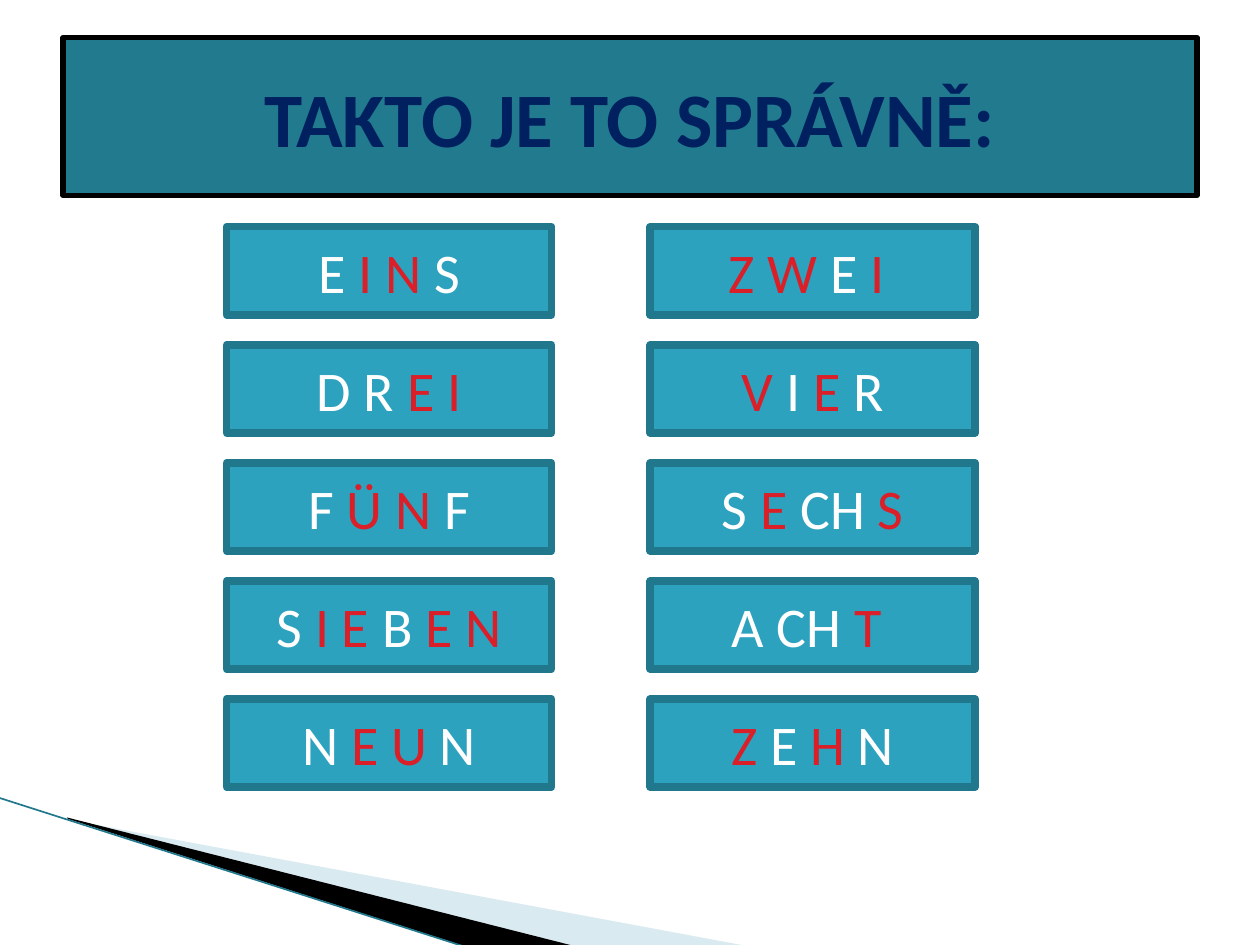
from lxml.etree import SubElement
from pptx import Presentation
from pptx.dml.color import RGBColor
from pptx.enum.shapes import MSO_CONNECTOR as Connector, MSO_SHAPE as Shape
from pptx.enum.text import MSO_ANCHOR as Anchor, PP_ALIGN as Align
from pptx.oxml.ns import qn
from pptx.util import Cm, Pt

WHITE = RGBColor(0xFF, 0xFF, 0xFF)
BLACK = RGBColor(0x00, 0x00, 0x00)
NAVY = RGBColor(0x00, 0x20, 0x60)
RED = RGBColor(0xDA, 0x1F, 0x28)
TEAL = RGBColor(0x22, 0x7A, 0x8F)
DARK_TEAL = RGBColor(0x21, 0x78, 0x8D)
AQUA = RGBColor(0x2D, 0xA2, 0xBF)
PALE = RGBColor(0xA0, 0xCB, 0xDC)

ROWS = [
    ("E |I N| S", "|Z W| E |I "),
    ("D R |E I", "|V| I |E| R"),
    ("F |Ü N| F", "S |E| CH |S"),
    ("S |I E| B |E N", "A CH |T "),
    ("N |E U| N", "|Z| E |H| N"),
]
COLUMN_LEFTS = (4.57, 13.11)
FIRST_TOP, ROW_STEP = 4.57, 2.38
CARD_WIDTH, CARD_HEIGHT = 6.55, 1.78


def write_text(box, text, *, size, color, accent=RED, bold=False):
    """Write centred text; the pieces between bars alternate to the accent colour."""
    frame = box.text_frame
    frame.word_wrap = True
    frame.vertical_anchor = Anchor.MIDDLE
    para = frame.paragraphs[0]
    para.alignment = Align.CENTER
    for index, piece in enumerate(text.split("|")):
        if piece:
            span = para.add_run()
            span.text = piece
            span.font.name = "Calibri"
            span.font.size = Pt(size)
            span.font.bold = bold
            span.font.color.rgb = accent if index % 2 else color


def add_box(page, left, top, width, height, *, fill, line, weight):
    """Add a filled and outlined rectangle, measured in centimetres."""
    box = page.shapes.add_shape(Shape.RECTANGLE, Cm(left), Cm(top), Cm(width), Cm(height))
    box.shadow.inherit = False
    box.fill.solid()
    box.fill.fore_color.rgb = fill
    box.line.color.rgb = line
    box.line.width = Pt(weight)
    return box


def add_wedge(page, points, *, fill, opacity=100):
    """Add a borderless polygon through points in centimetres."""
    start, *others = [(Cm(x), Cm(y)) for x, y in points]
    builder = page.shapes.build_freeform(*start)
    builder.add_line_segments(others, close=True)
    wedge = builder.convert_to_shape()
    wedge.shadow.inherit = False
    wedge.fill.solid()
    wedge.fill.fore_color.rgb = fill
    wedge.line.fill.background()
    if opacity < 100:
        color = wedge.fill._xPr.find(".//" + qn("a:srgbClr"))
        SubElement(color, qn("a:alpha"), val=str(opacity * 1000))


def add_line(page, start, end, *, color, weight):
    """Add a straight line between two points in centimetres."""
    line = page.shapes.add_connector(Connector.STRAIGHT, *map(Cm, start + end))
    line.line.color.rgb = color
    line.line.width = Pt(weight)
    SubElement(line._element.spPr, qn("a:effectLst"))


def add_corner(page):
    """Draw the sweeping wedges in the lower left corner."""
    add_wedge(page, [(1.4, 16.53), (15.11, 19.08), (11.58, 19.08), (1.4, 16.51)],
              fill=PALE, opacity=40)
    add_wedge(page, [(1.35, 16.48), (11.61, 19.08), (9.45, 19.1), (1.37, 16.51)], fill=BLACK)
    add_line(page, (-0.03, 16.08), (9.42, 19.1), color=DARK_TEAL, weight=0.95)


def main():
    """Build the slide of German numbers and save it."""
    deck = Presentation()
    deck.slide_width, deck.slide_height = Cm(25.4), Cm(19.05)
    page = deck.slides.add_slide(deck.slide_layouts[6])
    add_corner(page)
    title = add_box(page, 1.27, 0.76, 22.86, 3.18, fill=TEAL, line=BLACK, weight=3)
    write_text(title, "TAKTO JE TO SPRÁVNĚ:", size=44, color=NAVY, bold=True)
    for row, words in enumerate(ROWS):
        for left, word in zip(COLUMN_LEFTS, words):
            card = add_box(page, left, FIRST_TOP + row * ROW_STEP, CARD_WIDTH, CARD_HEIGHT,
                           fill=AQUA, line=DARK_TEAL, weight=4.33)
            write_text(card, word, size=32, color=WHITE)
    deck.save("out.pptx")


if __name__ == "__main__":
    main()
